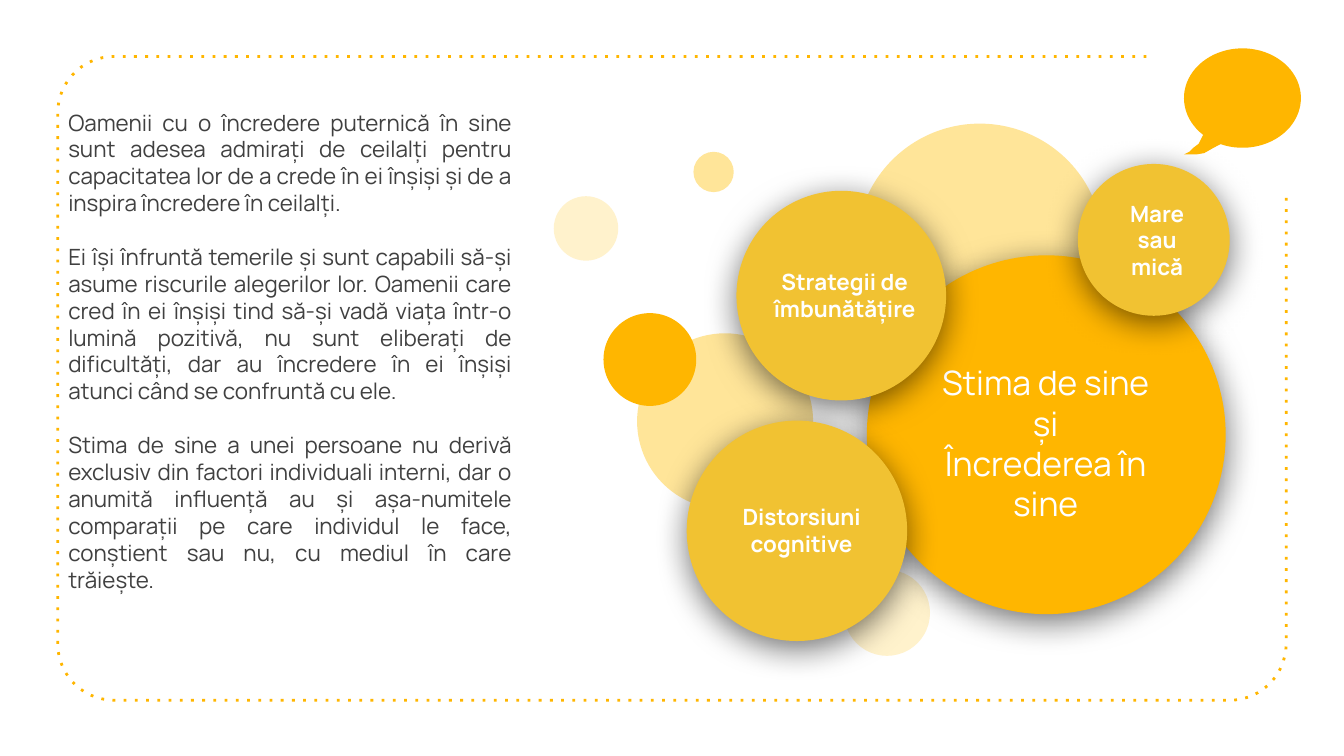
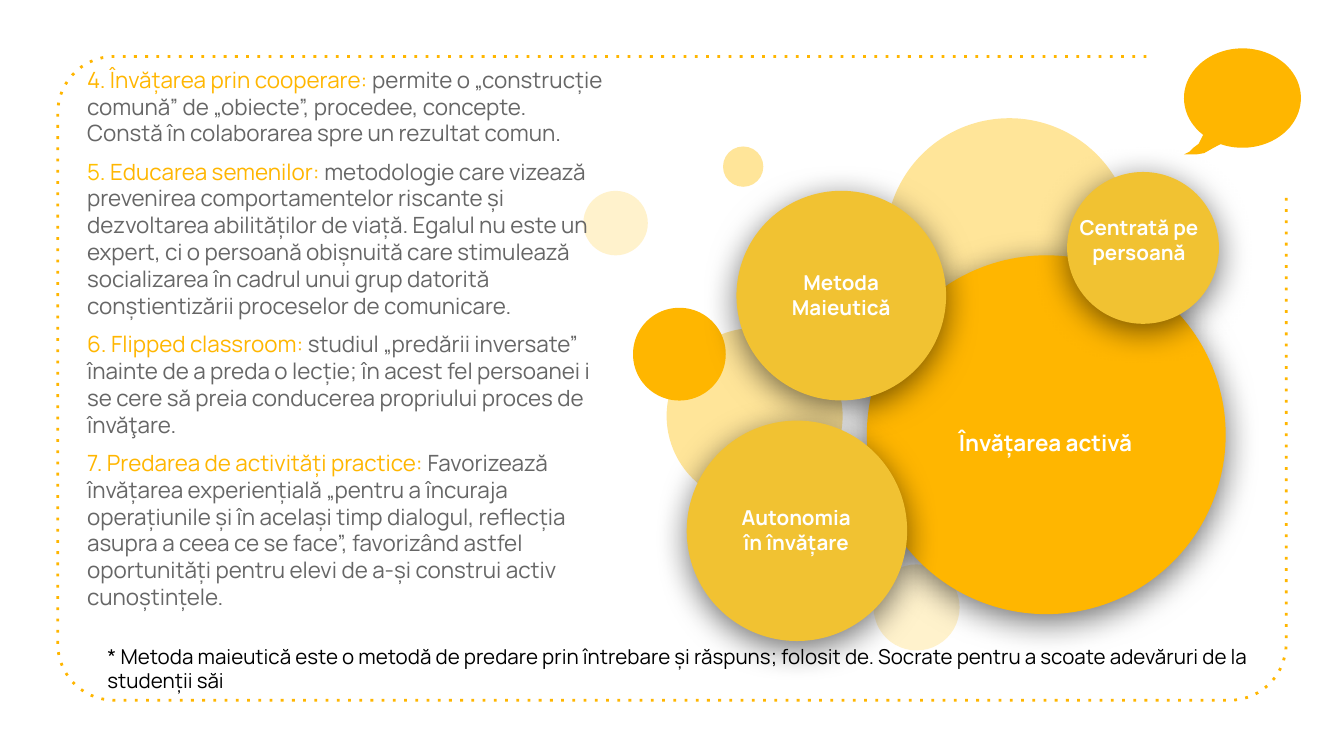
import dataclasses
import math

import pptx
import pptx.dml.color
import pptx.enum.dml
import pptx.enum.shapes
import pptx.enum.text
import pptx.oxml
import pptx.oxml.ns
import pptx.util

Inches = pptx.util.Inches
ALIGN = pptx.enum.text.PP_ALIGN
ANCHOR = pptx.enum.text.MSO_ANCHOR
AUTO_SIZE = pptx.enum.text.MSO_AUTO_SIZE
PRESET = pptx.enum.shapes.MSO_SHAPE


@dataclasses.dataclass(frozen=True)
class Theme:
    font: str = "Manrope"
    amber: str = "FFB600"
    orange: str = "FFC000"
    gold: str = "F1C232"
    light: str = "FFE599"
    pale: str = "FFF2CC"
    white: str = "FFFFFF"
    black: str = "000000"
    dark_grey: str = "404040"
    grey: str = "666666"
    hub_size: int = 18
    body_size: int = 12
    small_size: int = 11


THEME = Theme()

# Decorative circles: left and top within the cluster, diameter, colour
BACKDROP = [
    (2.16, 3.32, 0.64, THEME.pale),
    (0, 0.54, 0.48, THEME.pale),
    (0.62, 1.56, 1.31, THEME.light),
    (2.25, 0, 1.84, THEME.light),
    (0.37, 1.41, 0.69, THEME.amber),
    (1.04, 0.21, 0.3, THEME.light),
]


def rgb(colour):
    return pptx.dml.color.RGBColor.from_string(colour)


def write_text(shape, paragraphs, *, size=THEME.body_size, colour=THEME.white, bold=False,
               align=ALIGN.LEFT, anchor=ANCHOR.TOP, before=0, after=0,
               inset_x=0.1, inset_y=0.1, indent=0, grow=False):
    """Each paragraph is a string or a list of (text, colour) runs."""
    frame = shape.text_frame
    frame.word_wrap = True
    frame.auto_size = AUTO_SIZE.SHAPE_TO_FIT_TEXT if grow else AUTO_SIZE.NONE
    frame.vertical_anchor = anchor
    frame.margin_left, frame.margin_right = Inches(inset_x + indent), Inches(inset_x)
    frame.margin_top = frame.margin_bottom = Inches(inset_y)
    for index, content in enumerate(paragraphs):
        paragraph = frame.add_paragraph() if index else frame.paragraphs[0]
        paragraph.alignment = align
        paragraph.space_before = pptx.util.Pt(before)
        paragraph.space_after = pptx.util.Pt(after)
        runs = [(content, colour)] if isinstance(content, str) else content
        for text, run_colour in runs:
            run = paragraph.add_run()
            run.text = text
            run.font.name = THEME.font
            run.font.size = pptx.util.Pt(size)
            run.font.bold = bold
            run.font.color.rgb = rgb(run_colour)


def add_text(shapes, box, paragraphs, **text_format):
    shape = shapes.add_textbox(*map(Inches, box))
    write_text(shape, paragraphs, **text_format)


def add_filled(shapes, preset, box, colour):
    shape = shapes.add_shape(preset, *map(Inches, box))
    shape.shadow.inherit = False
    shape.fill.solid()
    shape.fill.fore_color.rgb = rgb(colour)
    shape.line.fill.background()
    return shape


def add_circle(shapes, left, top, diameter, colour, shadow=False):
    circle = add_filled(shapes, PRESET.OVAL, (left, top, diameter, diameter), colour)
    if shadow:
        effects = circle.element.spPr.find(pptx.oxml.ns.qn("a:effectLst"))
        effects.append(pptx.oxml.parse_xml(
            f'<a:outerShdw {pptx.oxml.ns.nsdecls("a")} blurRad="228600" dist="50800" '
            f'dir="5400000" algn="bl" rotWithShape="0"><a:srgbClr val="{THEME.black}">'
            '<a:alpha val="54000"/></a:srgbClr></a:outerShdw>'))


def arc(center_x, center_y, radius_x, radius_y, start, end, steps):
    """Points on an ellipse; degrees run clockwise from the right."""
    angles = [math.radians(start + (end - start) * i / steps) for i in range(steps + 1)]
    return [(center_x + radius_x * math.cos(a), center_y + radius_y * math.sin(a))
            for a in angles]


def add_outline(slide, points, close):
    (start_x, start_y), *rest = [(Inches(x), Inches(y)) for x, y in points]
    builder = slide.shapes.build_freeform(start_x, start_y)
    builder.add_line_segments(rest, close=close)
    shape = builder.convert_to_shape()
    shape.shadow.inherit = False
    return shape


def add_frame(slide, box):
    """Dotted frame, open at the top right, kept on the layout for all slides."""
    left, top, width, height = box
    right, bottom, radius = left + width, top + height, 0.42
    points = [(right - 1.04, top)]
    for x, y, start in [(left + radius, top + radius, 270),
                        (left + radius, bottom - radius, 180),
                        (right - radius, bottom - radius, 90)]:
        points += arc(x, y, radius, radius, start, start - 90, 15)
    points.append((right, top + 1.04))
    frame = add_outline(slide, points, close=False)
    frame.fill.background()
    frame.line.color.rgb = rgb(THEME.amber)
    frame.line.width = pptx.util.Pt(1.5)
    frame.line.dash_style = pptx.enum.dml.MSO_LINE.ROUND_DOT
    frame.element.spPr.find(".//" + pptx.oxml.ns.qn("a:prstDash")).set("val", "dot")
    slide.slide_layout.shapes.element.append(frame.element)


def add_speech_bubble(slide, box):
    left, top, width, height = box
    radius_x, radius_y = width / 2, 0.37
    tail = [(0.22, 0.74), (0.15, 0.78), (0.09, height), (0, height),
            (0.04, 0.77), (0.07, 0.74), (0.11, 0.71), (0.14, 0.65)]
    points = arc(left + radius_x, top + radius_y, radius_x, radius_y, 132, 472, 72)
    points += [(left + x, top + y) for x, y in tail]
    bubble = add_outline(slide, points, close=True)
    bubble.fill.solid()
    bubble.fill.fore_color.rgb = rgb(THEME.amber)
    bubble.line.fill.background()


def add_backdrop(slide, left, top):
    shapes = slide.shapes.add_group_shape().shapes
    for x, y, diameter, colour in BACKDROP:
        add_circle(shapes, left + x, top + y, diameter, colour)


def add_hub(slide, box, paragraphs, **text_format):
    left, top, diameter = box
    shapes = slide.shapes.add_group_shape().shapes
    add_circle(shapes, left, top, diameter, THEME.amber, shadow=True)
    label = add_filled(shapes, PRESET.RECTANGLE,
                       (left + 0.31, top + 0.76, 2.04, 1.27), THEME.amber)
    write_text(label, paragraphs, align=ALIGN.CENTER, anchor=ANCHOR.MIDDLE, **text_format)


def add_satellites(slide, satellites, size):
    for circle, label_box, paragraphs in satellites:
        shapes = slide.shapes.add_group_shape().shapes
        add_circle(shapes, *circle, THEME.gold, shadow=True)
        add_text(shapes, label_box, paragraphs, size=size, bold=True,
                 align=ALIGN.CENTER, anchor=ANCHOR.MIDDLE)


def add_circle_map(slide, backdrop_at, hub, hub_format, satellites, satellite_size):
    add_backdrop(slide, *backdrop_at)
    add_hub(slide, (6.45, 1.9, 2.67), hub, **hub_format)
    add_satellites(slide, satellites, satellite_size)
    add_speech_bubble(slide, (8.81, 0.36, 0.87, 0.79))


UPPER_CIRCLE = (5.48, 1.42, 1.56)
LOWER_CIRCLE = (5.11, 3.13, 1.64)


def build_confidence(slide):
    add_circle_map(
        slide, (4.12, 0.92),
        ["Stima de sine", "și", "Încrederea în sine"], {"size": THEME.hub_size},
        [(UPPER_CIRCLE, (5.53, 1.68, 1.51, 1.03), ["Strategii de îmbunătățire"]),
         (LOWER_CIRCLE, (5.25, 3.43, 1.43, 1.03), ["Distorsiuni cognitive"]),
         ((8.02, 1.22, 1.13), (8.18, 1.34, 0.86, 0.89), ["Mare sau mică"])],
        THEME.body_size)
    add_text(slide.shapes, (0.41, 0.76, 3.5, 3.74), [
        "Oamenii cu o încredere puternică în sine sunt adesea admirați de ceilalți pentru "
        "capacitatea lor de a crede în ei înșiși și de a inspira încredere în ceilalți.",
        "Ei își înfruntă temerile și sunt capabili să-și asume riscurile alegerilor lor. "
        "Oamenii care cred în ei înșiși tind să-și vadă viața într-o lumină pozitivă, nu sunt "
        "eliberați de dificultăți, dar au încredere în ei înșiși atunci când se confruntă cu ele.",
        "Stima de sine a unei persoane nu derivă exclusiv din factori individuali interni, dar "
        "o anumită influență au și așa-numitele comparații pe care individul le face, "
        "conștient sau nu, cu mediul în care trăiește.",
    ], colour=THEME.dark_grey, align=ALIGN.JUSTIFY, after=14.4, inset_y=0.05, grow=True)


def build_active_learning(slide):
    add_circle_map(
        slide, (4.34, 0.88),
        ["Învățarea activă"], {"bold": True},
        [(UPPER_CIRCLE, (5.73, 1.68, 1.06, 1.03), ["Metoda", "Maieutică"]),
         (LOWER_CIRCLE, (5.34, 3.43, 1.17, 1.03), ["Autonomia în învățare"]),
         ((7.94, 1.28, 1.13), (7.89, 1.41, 1.17, 0.75), ["Centrată pe persoană"])],
        THEME.small_size)
    # Numbered methods
    add_text(slide.shapes, (0.55, 0.39, 4.06, 4.53), [
        [("4. Învățarea prin cooperare: ", THEME.amber),
         ("permite o „construcție comună” de „obiecte”, procedee, concepte. Constă în "
          "colaborarea spre un rezultat comun.", THEME.grey)],
        [("5. ", THEME.orange), ("Educarea semenilor: ", THEME.amber),
         ("metodologie care vizează prevenirea comportamentelor riscante și dezvoltarea "
          "abilităților de viață. Egalul nu este un expert, ci o persoană obișnuită care "
          "stimulează socializarea în cadrul unui grup datorită conștientizării proceselor "
          "de comunicare.", THEME.grey)],
        [("6. Flipped classroom:", THEME.amber),
         (" studiul „predării inversate” înainte de a preda o lecție; în acest fel persoanei "
          "i se cere să preia conducerea propriului proces de învăţare.", THEME.grey)],
        [("7. Predarea de activități practice: ", THEME.amber),
         ("Favorizează învățarea experiențială „pentru a încuraja operațiunile și în același "
          "timp dialogul, reflecția asupra a ceea ce se face”, favorizând astfel oportunități "
          "pentru elevi de a-și construi activ cunoștințele.", THEME.grey)],
    ], before=6)
    # Footnote
    add_text(slide.shapes, (0.55, 4.69, 8.96, 0.57), [
        "* Metoda maieutică este o metodă de predare prin întrebare și răspuns; folosit de. "
        "Socrate pentru a scoate adevăruri de la studenții săi",
    ], size=THEME.small_size, colour=THEME.black, indent=0.15, grow=True)


def main():
    presentation = pptx.Presentation()
    # Widescreen, 16 to 9
    presentation.slide_width = Inches(10)
    presentation.slide_height = Inches(10 * 9 / 16)
    blank_layout = presentation.slide_layouts[6]
    for index, build in enumerate([build_confidence, build_active_learning]):
        slide = presentation.slides.add_slide(blank_layout)
        if index == 0:
            add_frame(slide, (0.43, 0.42, 9.14, 4.79))
        build(slide)
    presentation.save("out.pptx")


if __name__ == "__main__":
    main()
